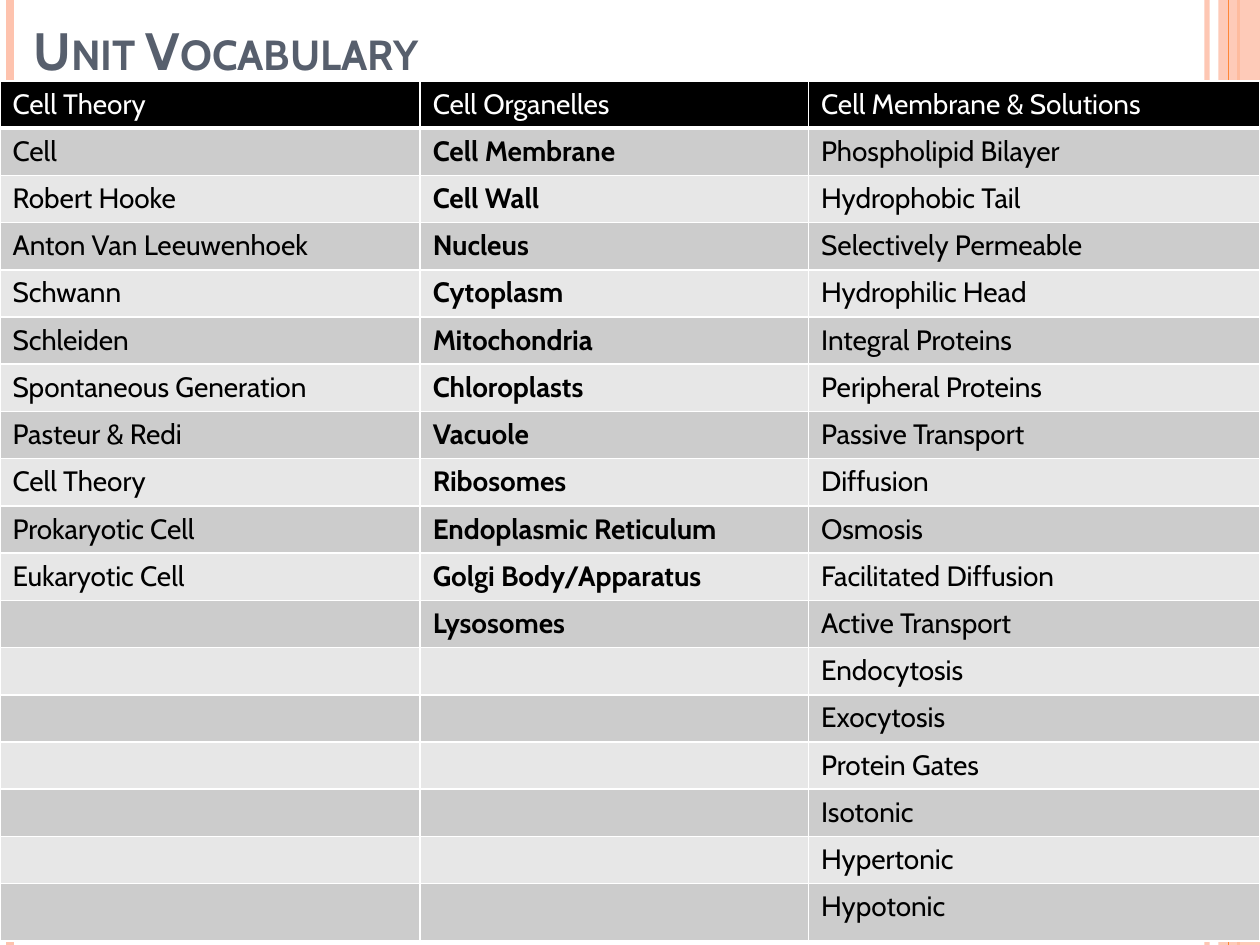
from dataclasses import dataclass
from itertools import zip_longest

from lxml.etree import SubElement
from pptx import Presentation
from pptx.dml.color import RGBColor
from pptx.enum.shapes import MSO_CONNECTOR as Connector, MSO_SHAPE as Shape
from pptx.enum.text import MSO_ANCHOR as Anchor
from pptx.oxml.ns import qn
from pptx.util import Cm, Pt


@dataclass(frozen=True)
class Theme:
    font: str = "Cabin"
    title_size: float = 30
    cell_size: float = 16
    title: str = "575F6D"
    accent: str = "FE8637"
    soft: str = "FEC3AE"
    header: str = "000000"
    text: str = "000000"
    white: str = "FFFFFF"
    bands: tuple = ("CCCCCC", "E7E7E7")


@dataclass(frozen=True)
class Stripe:
    x: float
    color: str
    weight: float
    opacity: int = 100


@dataclass(frozen=True)
class Column:
    heading: str
    width: float
    terms: tuple
    bold: bool = False


THEME = Theme()
PAGE_WIDTH, PAGE_HEIGHT = 25.4, 19.05
TABLE_TOP, TABLE_HEIGHT, LAST_ROW = 1.63, 17.35, 1.16

BACK_STRIPES = (
    Stripe(24.33, THEME.soft, 3, 93),
    Stripe(0.21, THEME.soft, 4.5),
    Stripe(24.97, THEME.accent, 1.5),
)
FRONT_STRIPE = Stripe(24.77, THEME.accent, 0.75)

COLUMNS = (
    Column("Cell Theory", 8.47, (
        "Cell", "Robert Hooke", "Anton Van Leeuwenhoek", "Schwann", "Schleiden",
        "Spontaneous Generation", "Pasteur & Redi", "Cell Theory",
        "Prokaryotic Cell", "Eukaryotic Cell")),
    Column("Cell Organelles", 7.83, (
        "Cell Membrane", "Cell Wall", "Nucleus", "Cytoplasm", "Mitochondria",
        "Chloroplasts", "Vacuole", "Ribosomes", "Endoplasmic Reticulum",
        "Golgi Body/Apparatus", "Lysosomes"), bold=True),
    Column("Cell Membrane & Solutions", 9.1, (
        "Phospholipid Bilayer", "Hydrophobic Tail", "Selectively Permeable",
        "Hydrophilic Head", "Integral Proteins", "Peripheral Proteins",
        "Passive Transport", "Diffusion", "Osmosis", "Facilitated Diffusion",
        "Active Transport", "Endocytosis", "Exocytosis", "Protein Gates",
        "Isotonic", "Hypertonic", "Hypotonic")),
)


def set_opacity(element, percent: int) -> None:
    color = next(element.iter(qn("a:srgbClr")))
    SubElement(color, qn("a:alpha"), val=str(percent * 1000))


def add_stripe(page, stripe: Stripe) -> None:
    line = page.shapes.add_connector(
        Connector.STRAIGHT, Cm(stripe.x), 0, Cm(stripe.x), Cm(PAGE_HEIGHT))
    line.line.color.rgb = RGBColor.from_string(stripe.color)
    line.line.width = Pt(stripe.weight)
    properties = line._element.spPr
    if stripe.opacity < 100:
        set_opacity(properties, stripe.opacity)
    SubElement(properties, qn("a:effectLst"))


def add_band(page, left: float, color: str, opacity: int) -> None:
    band = page.shapes.add_shape(
        Shape.RECTANGLE, Cm(left), 0, Cm(PAGE_WIDTH - left), Cm(PAGE_HEIGHT))
    band.shadow.inherit = False
    band.fill.solid()
    band.fill.fore_color.rgb = RGBColor.from_string(color)
    band.line.fill.background()
    set_opacity(band._element.spPr, opacity)


def add_span(para, text: str, size: float, color: str, bold: bool):
    span = para.add_run()
    span.text = text
    values = {"name": THEME.font, "size": Pt(size), "bold": bold}
    for key, value in values.items():
        setattr(span.font, key, value)
    span.font.color.rgb = RGBColor.from_string(color)
    return span


def add_title(page, text: str) -> None:
    box = page.shapes.add_textbox(Cm(0.43), Cm(-0.84), Cm(18.62), Cm(2.59))
    frame = box.text_frame
    for key, value in {"word_wrap": True, "vertical_anchor": Anchor.BOTTOM}.items():
        setattr(frame, key, value)
    span = add_span(frame.paragraphs[0], text, THEME.title_size, THEME.title, True)
    span.font._element.set("cap", "small")


def set_borders(cell, bottom: float) -> None:
    properties = cell._tc.get_or_add_tcPr()
    weights = {"a:lnL": 1, "a:lnR": 1, "a:lnT": 1, "a:lnB": bottom}
    for position, (side, weight) in enumerate(weights.items()):
        border = SubElement(properties, qn(side), w=str(Pt(weight)))
        fill = SubElement(border, qn("a:solidFill"))
        SubElement(fill, qn("a:srgbClr"), val=THEME.white)
        properties.insert(position, border)  # borders come before the fill


def fill_cell(cell, text: str, fill: str, color: str, bold: bool, bottom: float) -> None:
    cell.fill.solid()
    cell.fill.fore_color.rgb = RGBColor.from_string(fill)
    set_borders(cell, bottom)
    para = cell.text_frame.paragraphs[0]
    if text:
        add_span(para, text, THEME.cell_size, color, bold)
    else:  # keeps empty rows as low as the others
        SubElement(para._p, qn("a:endParaRPr"), sz=str(THEME.cell_size * 100))


def add_vocabulary(page, columns: tuple) -> None:
    rows = list(zip_longest(*(column.terms for column in columns), fillvalue=""))
    table = page.shapes.add_table(
        len(rows) + 1, len(columns), 0, Cm(TABLE_TOP),
        Cm(PAGE_WIDTH), Cm(TABLE_HEIGHT)).table
    for key in ("first_row", "horz_banding"):
        setattr(table, key, False)

    # Equal rows, with a taller last one
    for row in table.rows:
        row.height = Cm((TABLE_HEIGHT - LAST_ROW) / len(rows))
    table.rows[len(rows)].height = Cm(LAST_ROW)

    for index, column in enumerate(columns):
        table.columns[index].width = Cm(column.width)
        fill_cell(table.cell(0, index), column.heading,
                  THEME.header, THEME.white, False, 3)
        for number, terms in enumerate(rows):
            fill_cell(table.cell(number + 1, index), terms[index],
                      THEME.bands[number % 2], THEME.text, column.bold, 1)


def main() -> None:
    deck = Presentation()
    deck.slide_width, deck.slide_height = Cm(PAGE_WIDTH), Cm(PAGE_HEIGHT)
    page = deck.slides.add_slide(deck.slide_layouts[6])

    # Side stripes
    for stripe in BACK_STRIPES:
        add_stripe(page, stripe)
    add_band(page, 24.56, THEME.soft, 87)
    add_stripe(page, FRONT_STRIPE)

    # Title and word table
    add_title(page, "Unit Vocabulary")
    add_vocabulary(page, COLUMNS)
    deck.save("out.pptx")


if __name__ == "__main__":
    main()
